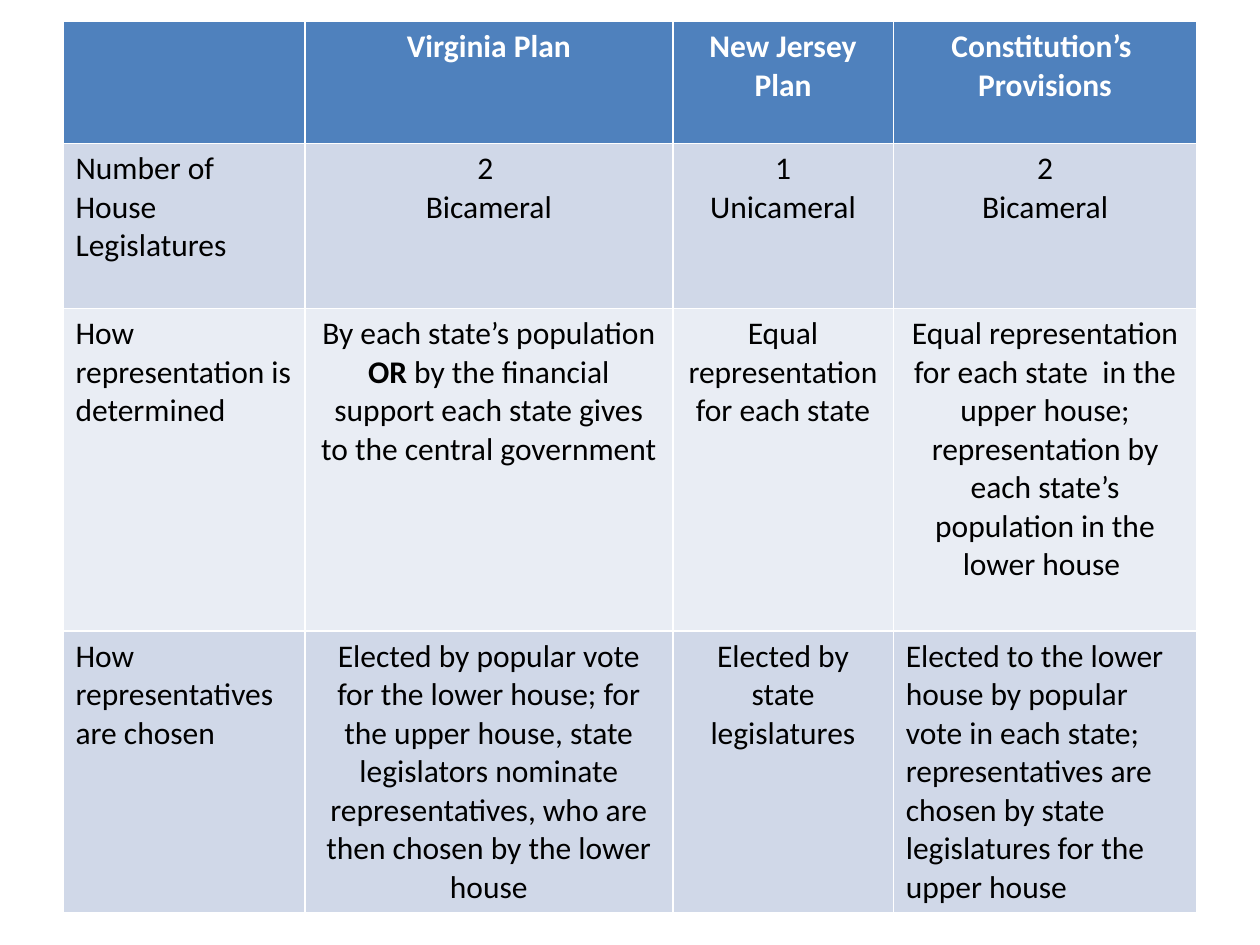
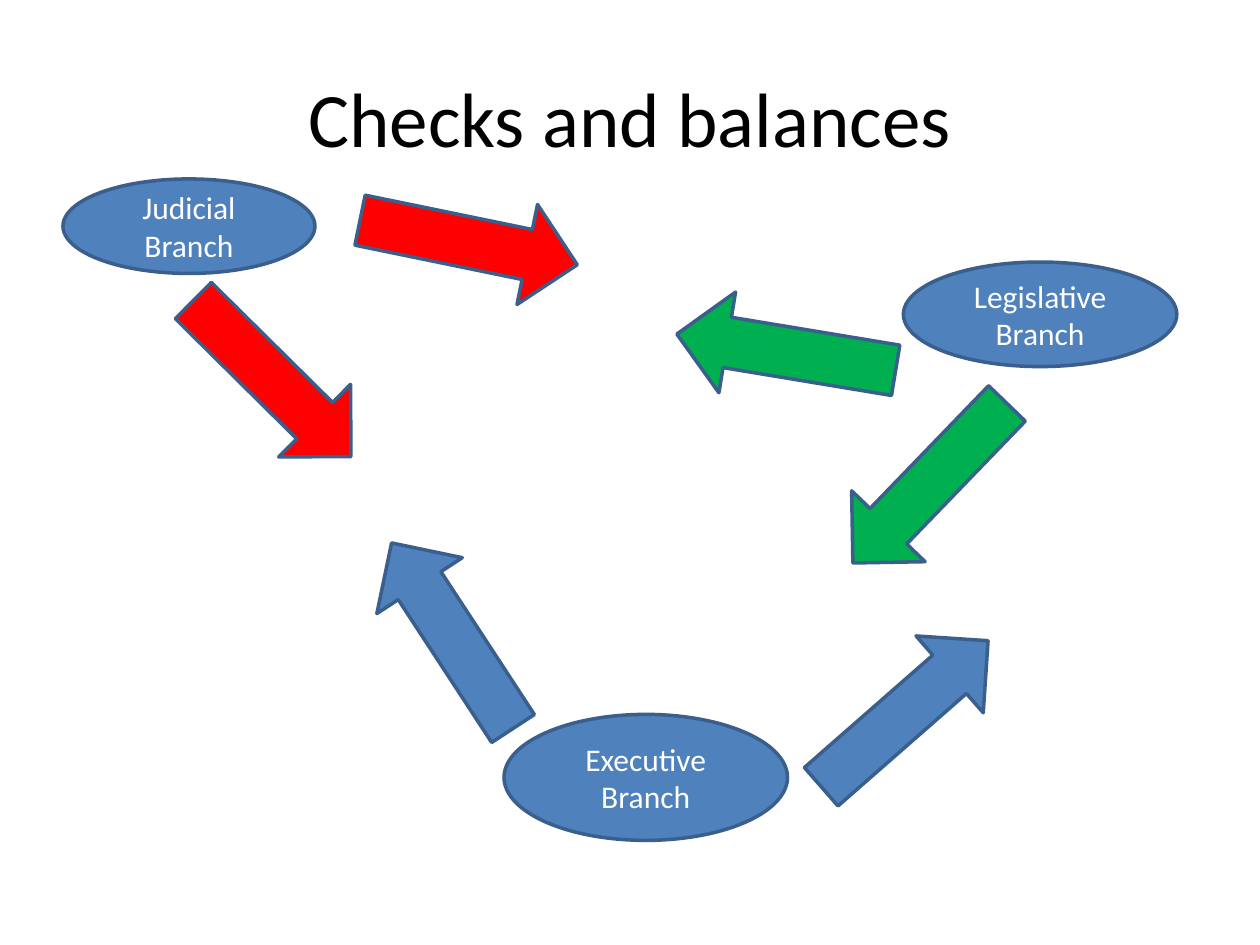
from pptx import Presentation
from pptx.dml.color import RGBColor
from pptx.enum.shapes import MSO_SHAPE
from pptx.enum.text import MSO_ANCHOR, PP_ALIGN
from pptx.util import Inches, Pt

BLUE, OUTLINE = "4F81BD", "3A5F8C"
RED, GREEN = "FF0000", "00B050"
BLACK, WHITE = "000000", "FFFFFF"
DARK_BAND, LIGHT_BAND = "D0D8E8", "E9EDF4"


def paint(target, colour):
    """Give a fill or a font one solid colour."""
    if hasattr(target, "solid"):
        target.solid()
        target.fore_color.rgb = RGBColor.from_string(colour)
    else:
        target.color.rgb = RGBColor.from_string(colour)


def write(frame, text, colour, size=18, bold=False, align=PP_ALIGN.CENTER):
    """Write one paragraph per line; words between ** are set in bold."""
    for number, line in enumerate(text.split("\n")):
        paragraph = frame.add_paragraph() if number else frame.paragraphs[0]
        paragraph.alignment = align
        for part, words in enumerate(line.split("**")):
            run = paragraph.add_run()
            run.text = words
            run.font.name = "Calibri"
            run.font.size = Pt(size)
            run.font.bold = bold or part % 2 == 1
            paint(run.font, colour)


prs = Presentation()
prs.slide_width, prs.slide_height = Inches(10), Inches(7.5)

# Slide 1: comparison of the plans
plans_slide = prs.slides.add_slide(prs.slide_layouts[6])
column_widths = [1.92, 2.92, 1.75, 2.41]
row_heights = [0.97, 1.31, 2.56, 2.22]
comparison = [
    ["", "Virginia Plan", "New Jersey Plan", "Constitution’s \nProvisions"],
    ["Number of House Legislatures", "2 \nBicameral", "1\nUnicameral", "2\nBicameral"],
    ["How representation is determined",
     "By each state’s population **OR** by the financial support each state "
     "gives to the central government",
     "Equal representation for each state",
     "Equal representation for each state  in the upper house; representation "
     "by each state’s population in the lower house "],
    ["How representatives are chosen",
     "Elected by popular vote for the lower house; for the upper house, state "
     "legislators nominate representatives, who are then chosen by the lower house",
     "Elected by state legislatures",
     "Elected to the lower house by popular vote in each state; representatives "
     "are chosen by state legislatures for the upper house"],
]
plans = plans_slide.shapes.add_table(
    len(row_heights), len(column_widths), Inches(0.5), Inches(0.17),
    Inches(sum(column_widths)), Inches(sum(row_heights))).table
for column, width in zip(plans.columns, column_widths):
    column.width = Inches(width)
for row, height in zip(plans.rows, row_heights):
    row.height = Inches(height)

left_aligned = {(1, 0), (2, 0), (3, 0), (3, 3)}
for r, answers in enumerate(comparison):
    header = r == 0
    band = BLUE if header else DARK_BAND if r % 2 else LIGHT_BAND
    for c, answer in enumerate(answers):
        cell = plans.cell(r, c)
        paint(cell.fill, band)
        if answer:
            write(cell.text_frame, answer, WHITE if header else BLACK, bold=header,
                  align=PP_ALIGN.LEFT if (r, c) in left_aligned else PP_ALIGN.CENTER)

# Slide 2: the three branches, each checking the other two
checks_slide = prs.slides.add_slide(prs.slide_layouts[5])
title = checks_slide.shapes.title
title.left, title.top, title.width, title.height = map(Inches, (0.5, 0.3, 9, 1.25))
title.text_frame.vertical_anchor = MSO_ANCHOR.MIDDLE
write(title.text_frame, "Checks and balances", BLACK, size=44)

branches = [
    ("Judicial Branch", 0.5, 1.42, 2, 0.75),
    ("Executive Branch", 4, 5.67, 2.25, 1),
    ("Legislative Branch", 7.17, 2.08, 2.17, 0.83),
]
checks = [  # colour, left, top, rotation
    (RED, 2.84, 1.52, 11.6),
    (RED, 1.28, 2.6, 44.7),
    (GREEN, 5.36, 2.39, 189.4),
    (BLUE, 2.71, 4.64, 236.8),
    (BLUE, 6.3, 5.26, 318.8),
    (GREEN, 6.5, 3.43, 134),
]
diagram = [(MSO_SHAPE.OVAL, name, BLUE, box, 0) for name, *box in branches]
diagram += [(MSO_SHAPE.RIGHT_ARROW, "", colour, (left, top, 1.76, 0.81), rotation)
            for colour, left, top, rotation in checks]
for kind, name, colour, box, rotation in diagram:
    part = checks_slide.shapes.add_shape(kind, *map(Inches, box))
    part.rotation = rotation
    part.shadow.inherit = False
    paint(part.fill, colour)
    paint(part.line.fill, OUTLINE)
    part.line.width = Pt(2)
    if name:
        part.text_frame.word_wrap = True
        part.text_frame.vertical_anchor = MSO_ANCHOR.MIDDLE
        write(part.text_frame, name, WHITE)

prs.save("out.pptx")
